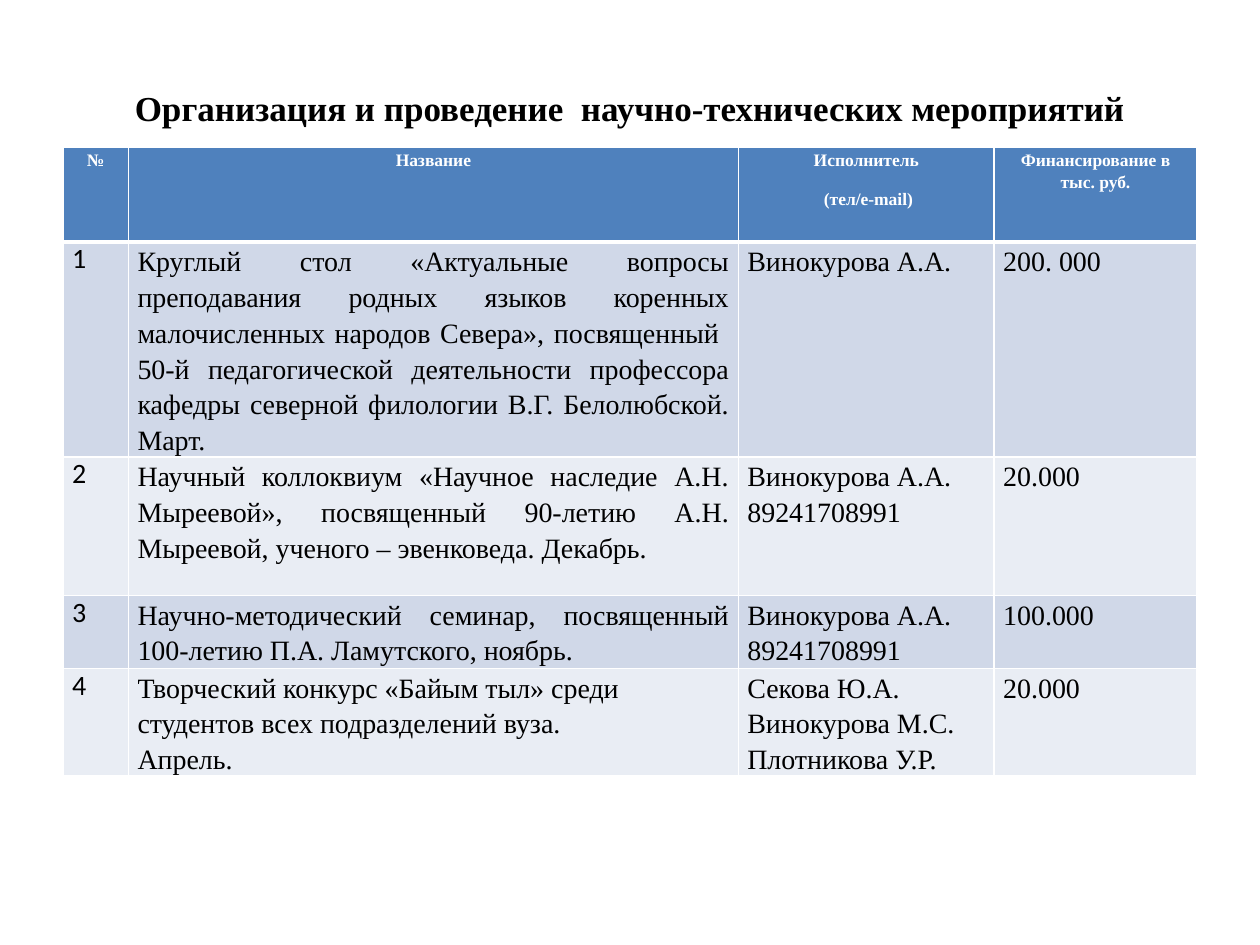
from lxml.etree import SubElement
from pptx import Presentation
from pptx.dml.color import RGBColor
from pptx.enum.text import MSO_ANCHOR, PP_ALIGN as Align
from pptx.oxml.ns import qn
from pptx.util import Pt

SERIF, SANS = "Times New Roman", "Calibri"
BLACK, WHITE = "000000", "FFFFFF"
HEADER_FILL, BAND_FILLS = "4F81BD", ("D0D8E8", "E9EDF4")
COLUMN_WIDTHS = (37.4, 348.5, 146.2, 115.9)
ROW_HEIGHTS = (54, 119.5, 79.2, 41.8, 41.8)

# Each cell is a list of paragraphs
HEADER = (["№"], ["Название"], ["Исполнитель", " (тел/e-mail)"], ["Финансирование в тыс. руб."])
EVENTS = (
    (["1"],
     ["Круглый стол «Актуальные вопросы преподавания родных языков коренных "
      "малочисленных народов Севера», посвященный  50-й педагогической деятельности "
      "профессора кафедры северной филологии В.Г. Белолюбской. Март."],
     ["Винокурова А.А."], ["200. 000"]),
    (["2"],
     ["Научный коллоквиум «Научное наследие А.Н. Мыреевой», посвященный 90-летию "
      "А.Н. Мыреевой, ученого – эвенковеда. Декабрь."],
     ["Винокурова А.А.", "89241708991"], ["20.000"]),
    (["3"],
     ["Научно-методический семинар, посвященный 100-летию П.А. Ламутского, ноябрь. "],
     ["Винокурова А.А.", "89241708991"], ["100.000"]),
    (["4"],
     ["Творческий конкурс «Байым тыл» среди студентов всех подразделений вуза.", "Апрель."],
     ["Секова Ю.А.", "Винокурова М.С.", "Плотникова У.Р."], ["20.000"]),
)


def rgb(value):
    return RGBColor.from_string(value)


def set_attributes(target, values):
    for name, value in values.items():
        setattr(target, name, value)


def write_paragraphs(frame, lines, paragraph_format, font_format, color):
    for index, line in enumerate(lines):
        paragraph = frame.add_paragraph() if index else frame.paragraphs[0]
        set_attributes(paragraph, paragraph_format)
        run = paragraph.add_run()
        run.text = line
        set_attributes(run.font, font_format)
        run.font.color.rgb = rgb(color)


def set_borders(cell, bottom_width):
    properties = cell._tc.get_or_add_tcPr()
    for side in ("lnL", "lnR", "lnT", "lnB"):
        width = bottom_width if side == "lnB" else 1
        line = SubElement(properties, qn(f"a:{side}"), w=str(Pt(width)))
        fill = SubElement(line, qn("a:solidFill"))
        SubElement(fill, qn("a:srgbClr"), val=WHITE)


def format_cell(cell, fill, side_margin, bottom_width=1):
    set_borders(cell, bottom_width)
    cell.fill.solid()
    cell.fill.fore_color.rgb = rgb(fill)
    set_attributes(cell, {
        "margin_left": Pt(side_margin), "margin_right": Pt(side_margin),
        "margin_top": 0, "margin_bottom": 0, "vertical_anchor": MSO_ANCHOR.TOP,
    })


def place_title(slide, left, top, width, height):
    title = slide.shapes.title
    set_attributes(title, {"left": Pt(left), "top": Pt(top),
                           "width": Pt(width), "height": Pt(height)})
    title.text_frame.vertical_anchor = MSO_ANCHOR.MIDDLE
    write_paragraphs(title.text_frame,
                     ["Организация и проведение  научно-технических мероприятий"],
                     {"alignment": Align.CENTER},
                     {"name": SERIF, "size": Pt(20), "bold": True}, BLACK)


def fill_header(table):
    for cell, lines in zip(table.rows[0].cells, HEADER):
        format_cell(cell, HEADER_FILL, 8.6, bottom_width=3)
        write_paragraphs(cell.text_frame, lines,
                         {"alignment": Align.CENTER, "line_spacing": 1.15, "space_after": Pt(10)},
                         {"name": SERIF, "size": Pt(10), "bold": True}, WHITE)


def fill_events(table):
    for row, event in enumerate(EVENTS, start=1):
        for column, lines in enumerate(event):
            cell = table.cell(row, column)
            format_cell(cell, BAND_FILLS[(row - 1) % 2], 5.2)
            is_number = column == 0
            justified = column == 1 and len(lines) == 1
            write_paragraphs(cell.text_frame, lines,
                             {"alignment": Align.JUSTIFY if justified else Align.LEFT,
                              "line_spacing": 1.0 if is_number else 1.15},
                             {"name": SANS if is_number else SERIF,
                              "size": Pt(16), "bold": False}, BLACK)


def place_table(slide, left, top, width, height):
    shape = slide.shapes.add_table(len(ROW_HEIGHTS), len(COLUMN_WIDTHS),
                                   Pt(left), Pt(top), Pt(width), Pt(height))
    table = shape.table
    for column, column_width in zip(table.columns, COLUMN_WIDTHS):
        column.width = Pt(column_width)
    for row, row_height in zip(table.rows, ROW_HEIGHTS):
        row.height = Pt(row_height)
    shape.height = Pt(height)
    fill_header(table)
    fill_events(table)


def main():
    presentation = Presentation()
    set_attributes(presentation, {"slide_width": Pt(720), "slide_height": Pt(540)})
    slide = presentation.slides.add_slide(presentation.slide_layouts[5])
    place_title(slide, 36, 21.6, 648, 80)
    place_table(slide, 36, 84.4, 648, 376.6)
    presentation.save("out.pptx")


if __name__ == "__main__":
    main()
